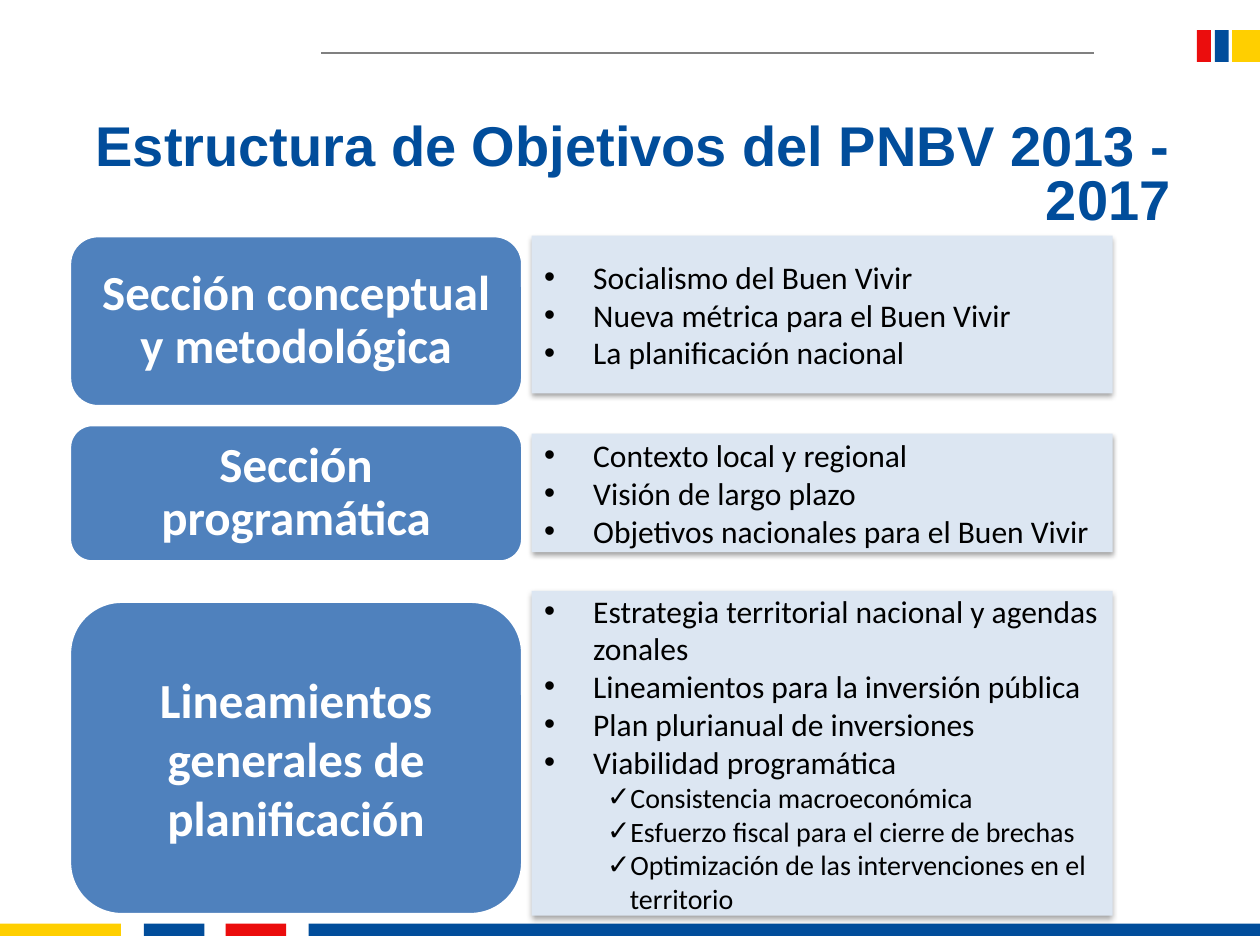
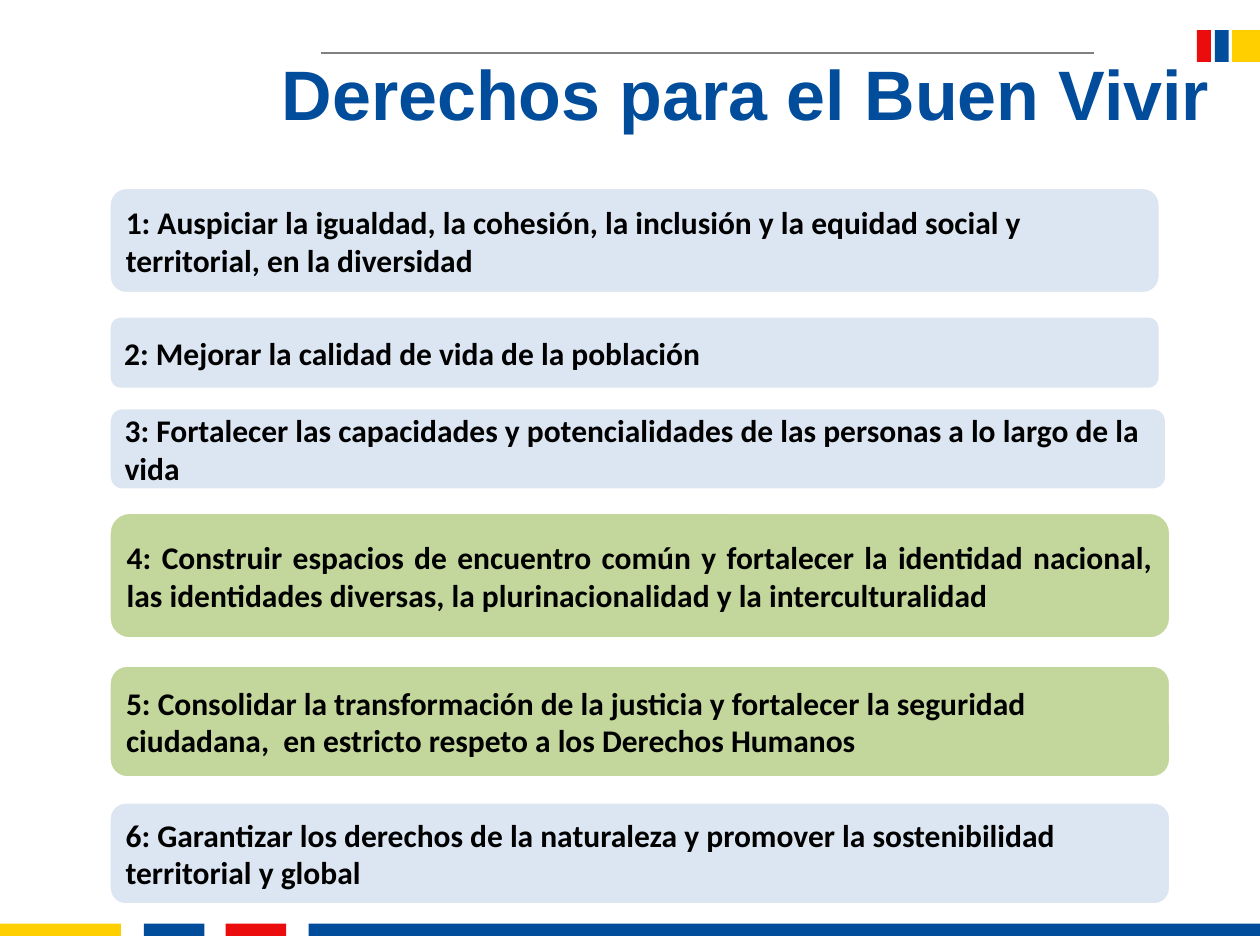
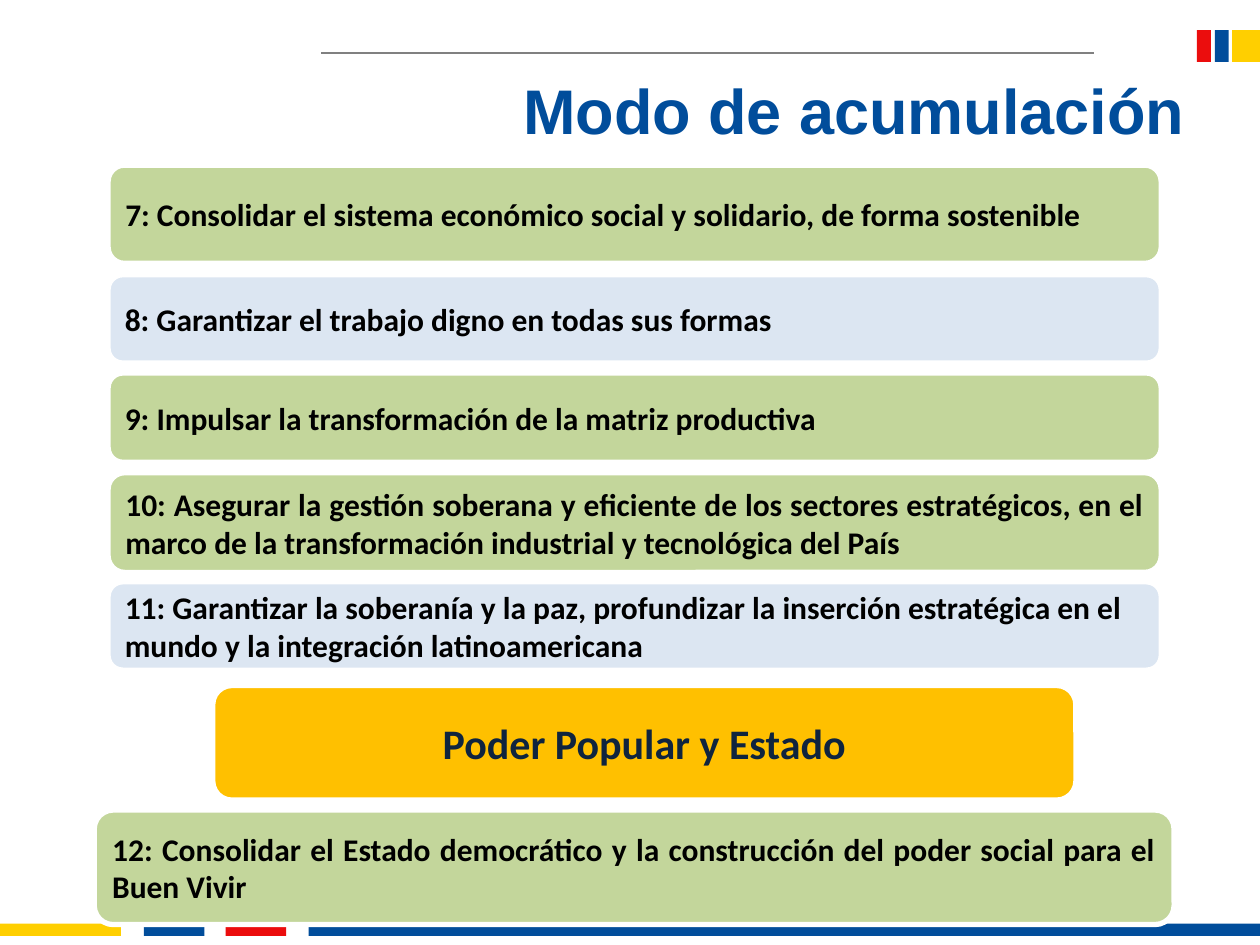
from lxml.etree import SubElement
from pptx import Presentation
from pptx.dml.color import RGBColor
from pptx.enum.shapes import MSO_CONNECTOR as LINK, MSO_SHAPE as SHAPE
from pptx.enum.text import MSO_ANCHOR as ANCHOR, PP_ALIGN as ALIGN
from pptx.oxml.ns import qn
from pptx.util import Cm, Pt

NAVY = RGBColor(0x01, 0x4D, 0x9B)
RED = RGBColor(0xEB, 0x0D, 0x0D)
YELLOW = RGBColor(0xFF, 0xCF, 0x00)
GRAY = RGBColor(0x80, 0x80, 0x80)
WHITE = RGBColor(0xFF, 0xFF, 0xFF)
BLACK = RGBColor(0x00, 0x00, 0x00)
STEEL = RGBColor(0x4F, 0x81, 0xBD)
PALE = RGBColor(0xDC, 0xE6, 0xF2)
GREEN = RGBColor(0xC3, 0xD6, 0x9B)
AMBER = RGBColor(0xFF, 0xC0, 0x00)
INK = RGBColor(0x0F, 0x24, 0x3E)

# Bullet sign, left margin, hanging indent, text size by level
LEVELS = [("•", 0.99, 0.99, 18), ("✓", 1.73, 0.46, 16)]

STAGES = [
    ("Sección conceptual y metodológica", 0.9, (4.75, 3.45), (4.75, 3.18), [
        (0, "Socialismo del Buen Vivir"),
        (0, "Nueva métrica para el Buen Vivir"),
        (0, "La planificación nacional")]),
    ("Sección programática", 0.9, (8.56, 2.77), (8.74, 2.39), [
        (0, "Contexto local y regional"),
        (0, "Visión de largo plazo"),
        (0, "Objetivos nacionales para el Buen Vivir")]),
    ("Lineamientos generales de planificación", None,
     (12.12, 6.32), (11.91, 6.55), [
        (0, "Estrategia territorial nacional y agendas zonales"),
        (0, "Lineamientos para la inversión pública"),
        (0, "Plan plurianual de inversiones"),
        (0, "Viabilidad programática"),
        (1, "Consistencia macroeconómica"),
        (1, "Esfuerzo fiscal para el cierre de brechas"),
        (1, "Optimización de las intervenciones en el territorio")]),
]

# Text, top, height, and what differs from a pale, left-aligned card
RIGHTS = [
    ("1: Auspiciar la igualdad, la cohesión, la inclusión y la equidad social "
     "y territorial, en la diversidad", 3.76, 2.18, {}),
    ("2: Mejorar la calidad de vida de la población", 6.35, 1.52, {}),
    ("3: Fortalecer las capacidades y potencialidades de las personas a lo "
     "largo de la vida", 8.2, 1.7, dict(width=21.36)),
    ("4: Construir espacios de encuentro común y fortalecer la identidad "
     "nacional, las identidades diversas, la plurinacionalidad y la "
     "interculturalidad", 10.31, 2.59,
     dict(width=21.44, fill=GREEN, align=ALIGN.JUSTIFY)),
    ("5: Consolidar la transformación de la justicia y fortalecer la "
     "seguridad ciudadana,  en estricto respeto a los Derechos Humanos",
     13.39, 2.31, dict(width=21.44, fill=GREEN)),
    ("6: Garantizar los derechos de la naturaleza y promover la "
     "sostenibilidad territorial y global", 16.15, 2.11, dict(width=21.44)),
]
GROWTH = [
    ("7: Consolidar el sistema económico social y solidario, de forma "
     "sostenible", 3.33, 1.98, dict(fill=GREEN, align=ALIGN.JUSTIFY)),
    ("8: Garantizar el trabajo digno en todas sus formas", 5.54, 1.78, {}),
    ("9: Impulsar la transformación de la matriz productiva", 7.52, 1.8,
     dict(fill=GREEN, align=ALIGN.JUSTIFY)),
    ("10: Asegurar la gestión soberana y eficiente de los sectores "
     "estratégicos, en el marco de la transformación industrial y "
     "tecnológica del País", 9.53, 2.01,
     dict(fill=GREEN, align=ALIGN.JUSTIFY)),
    ("11: Garantizar la soberanía y la paz, profundizar la inserción "
     "estratégica en el mundo y la integración latinoamericana",
     11.73, 1.78, {}),
    ("Poder Popular y Estado", 13.82, 2.31,
     dict(left=4.29, width=17.4, fill=AMBER, align=ALIGN.CENTER,
          size=24, color=INK)),
    ("12: Consolidar el Estado democrático y la construcción del poder "
     "social para el Buen Vivir", 16.33, 2.31,
     dict(left=1.9, width=21.77, fill=GREEN, align=ALIGN.JUSTIFY)),
]


def write(para, text, size=18, color=BLACK, bold=False, font="Calibri",
          align=ALIGN.LEFT, spacing=None):
    para.alignment = align
    if spacing:
        para.line_spacing = spacing
    run = para.add_run()
    run.text = text
    face = run.font
    face.name, face.size, face.bold = font, Pt(size), bold
    face.color.rgb = color


def block(slide, left, top, width, height, fill, kind=SHAPE.RECTANGLE,
          edge=0):
    """Filled shape, with a white outline if edge is given in points."""
    shape = slide.shapes.add_shape(kind, Cm(left), Cm(top), Cm(width),
                                   Cm(height))
    shape.shadow.inherit = False
    shape.fill.solid()
    shape.fill.fore_color.rgb = fill
    if edge:
        shape.line.color.rgb = WHITE
        shape.line.width = Pt(edge)
    else:
        shape.line.fill.background()
    frame = shape.text_frame
    frame.word_wrap = True
    frame.vertical_anchor = ANCHOR.MIDDLE
    return shape


def card(slide, text, top, height, left=2.18, width=21.23, fill=PALE,
         edge=3, **style):
    shape = block(slide, left, top, width, height, fill,
                  SHAPE.ROUNDED_RECTANGLE, edge)
    write(shape.text_frame.paragraphs[0], text, bold=True, **style)


def cast(shape):
    """Soft shadow below the shape."""
    effects = shape._element.spPr.find(qn("a:effectLst"))
    outer = SubElement(effects, qn("a:outerShdw"), blurRad=str(Pt(3.1)),
                       dist=str(Pt(1.8)), dir="5400000", rotWithShape="0")
    tint = SubElement(outer, qn("a:srgbClr"), val=str(BLACK))
    SubElement(tint, qn("a:alpha"), val="35000")


def bullet(para, sign, margin, hang):
    props = para._p.get_or_add_pPr()
    props.set("marL", str(Cm(margin)))
    props.set("indent", str(-Cm(hang)))
    SubElement(props, qn("a:buFont"), typeface="Arial")
    SubElement(props, qn("a:buChar"), char=sign)


def panel(slide, top, height, items):
    shape = block(slide, 10.72, top, 11.71, height, PALE)
    cast(shape)
    frame = shape.text_frame
    for i, (level, text) in enumerate(items):
        para = frame.add_paragraph() if i else frame.paragraphs[0]
        para.level = level
        sign, margin, hang, size = LEVELS[level]
        bullet(para, sign, margin, hang)
        write(para, text, size=size)


def title(slide, text, left, top, width, height, size):
    box = slide.shapes.add_textbox(Cm(left), Cm(top), Cm(width), Cm(height))
    frame = box.text_frame
    frame.word_wrap = True
    frame.vertical_anchor = ANCHOR.MIDDLE
    write(frame.paragraphs[0], text, size=size, color=NAVY, bold=True,
          font="Arial", align=ALIGN.RIGHT, spacing=0.8)


def rule(slide):
    line = slide.shapes.add_connector(LINK.STRAIGHT, Cm(6.48), Cm(1.07),
                                      Cm(22.05), Cm(1.07))
    line.line.color.rgb = GRAY
    line.line.width = Pt(0.75)
    SubElement(line._element.spPr, qn("a:effectLst"))


def start(deck):
    """New slide with the flag, top rule and footer band."""
    slide = deck.slides.add_slide(deck.slide_layouts[6])
    for left, width, fill in [(24.49, 0.28, NAVY), (24.13, 0.28, RED),
                              (24.84, 0.56, YELLOW)]:
        block(slide, left, 0.61, width, 0.64, fill)
    rule(slide)
    for left, width, fill in [(2.9, 1.22, NAVY), (4.55, 1.22, RED),
                              (0, 2.44, YELLOW), (6.22, 19.18, NAVY)]:
        block(slide, left, 18.62, width, 0.25, fill)
    return slide


def main():
    deck = Presentation()
    deck.slide_width, deck.slide_height = Cm(25.4), Cm(19.05)

    slide = start(deck)
    for name, spacing, label, detail, items in STAGES:
        card(slide, name, *label, left=1.4, width=9.14, fill=STEEL, edge=2,
             size=28, color=WHITE, align=ALIGN.CENTER, spacing=spacing)
        panel(slide, *detail, items)
    title(slide, "Estructura de Objetivos del PNBV 2013 - 2017",
          0.99, 2.67, 22.86, 1.8, 32)

    for cards, head in [
            (RIGHTS, ("Derechos para el Buen Vivir",
                      5, 0.25, 19.63, 3.53, 40)),
            (GROWTH, ("Modo de acumulación ",
                      7.29, 0.58, 17.2, 3.53, 36))]:
        slide = start(deck)
        for text, top, height, style in cards:
            card(slide, text, top, height, **style)
        title(slide, *head)

    deck.save("out.pptx")


if __name__ == "__main__":
    main()
